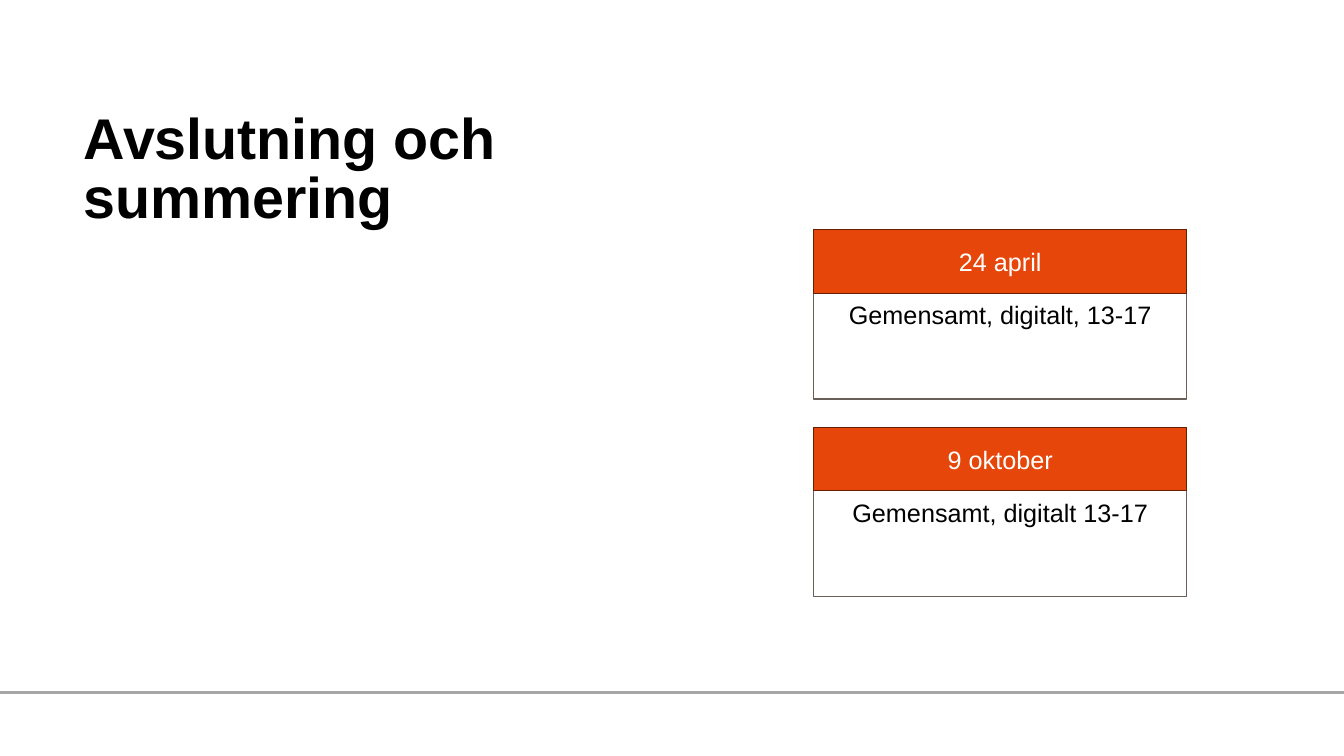
from lxml import etree
from pptx import Presentation, util as u
from pptx.dml.color import RGBColor
from pptx.enum import shapes, text
from pptx.oxml.ns import qn

HUES = {"ink": "000000", "paper": "FFFFFF", "head": "E6460A",
        "edge": "651F04", "frame": "6A605A", "rule": "A6A6A6"}


class Page:
    """Style and current slide; lengths are hundredths of the slide's size."""
    font = "Arial"

    def __init__(self, deck):
        self.deck = deck
        self.slide = deck.slides.add_slide(deck.slide_layouts[5])

    def col(self, n):
        return int(self.deck.slide_width * n / 100)

    def row(self, n):
        return int(self.deck.slide_height * n / 100)

    def hue(self, name):
        return RGBColor.from_string(HUES[name])

    def label(self, frame, words, size, hue, align, bold=False):
        para = frame.paragraphs[0]
        para.text = words
        para.alignment = align
        font = para.font
        font.name, font.size, font.bold = self.font, u.Pt(size), bold
        font.color.rgb = self.hue(hue)
        return para

    def title(self, words, x, y, w, h):
        box = self.slide.shapes.title
        box.left, box.top = self.col(x), self.row(y)
        box.width, box.height = self.col(w), self.row(h)
        frame = box.text_frame
        frame.word_wrap = True
        frame.auto_size = text.MSO_AUTO_SIZE.NONE
        frame.vertical_anchor = text.MSO_ANCHOR.TOP
        para = self.label(frame, words, 41, "ink", text.PP_ALIGN.LEFT, True)
        para.line_spacing = 0.85

    def rule(self, y):
        line = self.slide.shapes.add_connector(
            shapes.MSO_CONNECTOR.STRAIGHT, 0, self.row(y), self.col(100), self.row(y))
        line.line.color.rgb = self.hue("rule")
        line.line.width = u.Pt(1.5)
        etree.SubElement(line._element.spPr, qn("a:effectLst"))

    def box(self, words, x, y, w, h, fill, edge, ink):
        rect = self.slide.shapes.add_shape(
            shapes.MSO_SHAPE.RECTANGLE,
            self.col(x), self.row(y), self.col(w), self.row(h))
        rect.shadow.inherit = False
        rect.fill.solid()
        rect.fill.fore_color.rgb = self.hue(fill)
        rect.line.color.rgb = self.hue(edge)
        rect.line.width = u.Pt(1)
        frame = rect.text_frame
        frame.word_wrap = True
        frame.vertical_anchor = text.MSO_ANCHOR.MIDDLE
        self.label(frame, words, 18, ink, text.PP_ALIGN.CENTER)

    def card(self, date, words, x, y, w, h, top):
        self.box(words, x, y, w, h, "paper", "frame", "ink")
        self.box(date, x, y, w, top, "head", "edge", "paper")


def main():
    deck = Presentation()
    deck.slide_width, deck.slide_height = u.Inches(13.33), u.Inches(7.5)
    page = Page(deck)

    # Footer rule and title
    page.rule(91.6)
    page.title("Avslutning och summering", 5.48, 14.27, 43.73, 16.27)

    # Date cards, evenly stacked
    dates = [("24 april", "Gemensamt, digitalt, 13-17"),
             ("9 oktober", "Gemensamt, digitalt 13-17")]
    for n, (date, words) in enumerate(dates):
        page.card(date, words, x=60.54, y=30.4 + 26.13 * n, w=27.76, h=22.4, top=8.4)

    deck.save("out.pptx")


if __name__ == "__main__":
    main()
